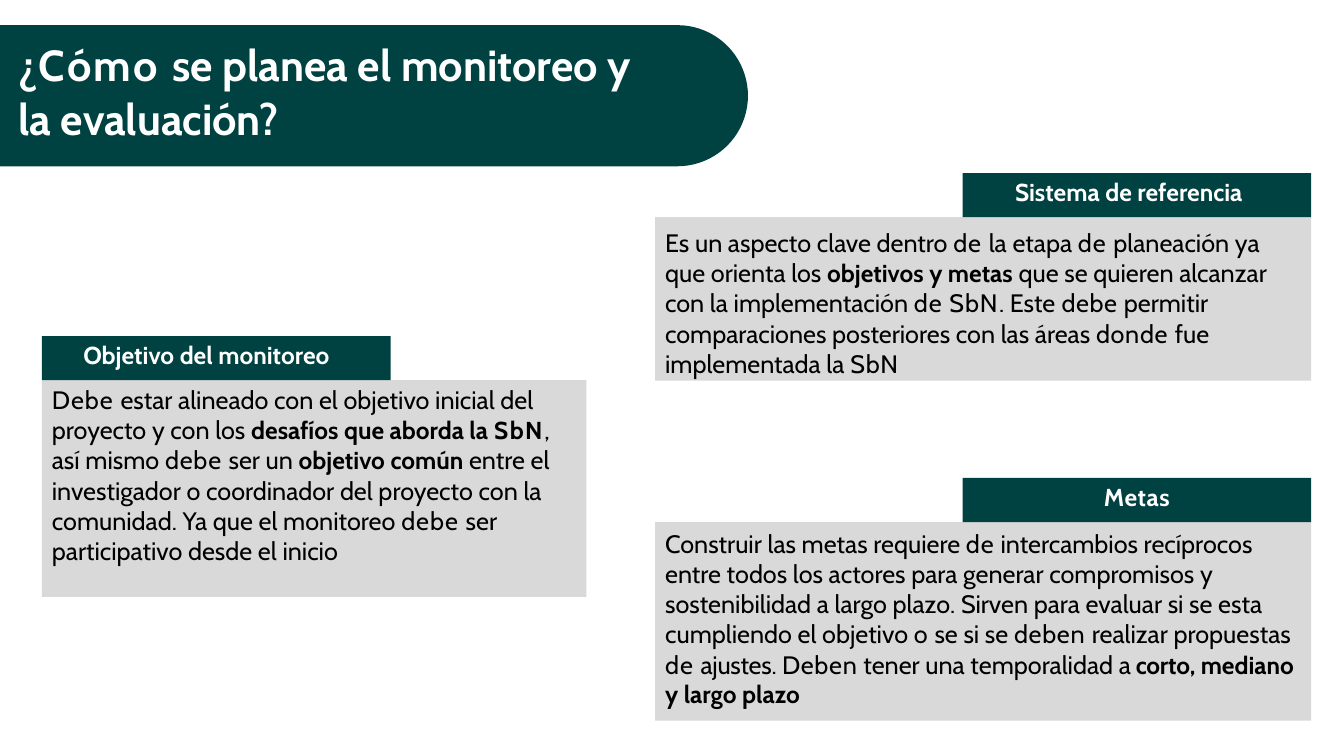
import math
from dataclasses import dataclass

from lxml import etree
from pptx import Presentation
from pptx import util as u
from pptx.dml.color import RGBColor
from pptx.enum import shapes, text


@dataclass(frozen=True)
class Theme:
    font: str = "Cabin"
    green: str = "004241"
    grey: str = "D9D9D9"
    white: str = "FFFFFF"
    black: str = "000000"
    title: float = 31
    body: float = 18
    strong: float = 17.5


def write(shape, runs, size, color, strong=None, align="LEFT", inset=(0, 0, 0, 0),
          before=0, line=1.0):
    """Fill one paragraph; a run is (text, letter spacing, bold)."""
    tf = shape.text_frame
    tf.word_wrap = True
    tf.auto_size = text.MSO_AUTO_SIZE.NONE
    tf.vertical_anchor = text.MSO_ANCHOR.TOP
    tf.margin_left, tf.margin_top, tf.margin_right, tf.margin_bottom = map(u.Inches, inset)
    p = tf.paragraphs[0]
    p.alignment = getattr(text.PP_ALIGN, align)
    p.space_before, p.line_spacing = u.Pt(before), line
    for words, spacing, bold in runs:
        r = p.add_run()
        r.text = words
        r.font.name, r.font.bold = Theme.font, bold
        r.font.size = u.Pt(strong if bold and strong else size)
        r.font.color.rgb = RGBColor.from_string(color)
        if spacing:
            r.font._element.set("spc", str(round(spacing * 100)))


class Deck:
    COLS, ROWS = 32, 18
    HEAD_W, HEAD_H = 8.3, 1.05

    def __init__(self, theme):
        self.theme = theme
        self.prs = Presentation()
        self.prs.slide_width, self.prs.slide_height = u.Inches(13.33), u.Inches(7.5)
        self.s = self.prs.slides.add_slide(self.prs.slide_layouts[5])

    def x(self, cols):
        return round(self.prs.slide_width * cols / self.COLS)

    def y(self, rows):
        return round(self.prs.slide_height * rows / self.ROWS)

    def paint(self, sp, color):
        sp.shadow.inherit = False
        sp.fill.solid()
        sp.fill.fore_color.rgb = RGBColor.from_string(color)
        sp.line.fill.background()

    def banner(self, top, width, height, steps=40):
        """Band from the left edge that ends in a half circle."""
        radius = self.y(height) / 2
        cx, cy = self.x(width) - radius, self.y(top) + radius
        angles = [math.pi * (i / steps - 0.5) for i in range(steps + 1)]
        arc = [(round(cx + radius * math.cos(a)), round(cy + radius * math.sin(a)))
               for a in angles]
        fb = self.s.shapes.build_freeform(0, self.y(top))
        fb.add_line_segments(arc + [(0, self.y(top + height))], close=True)
        sp = fb.convert_to_shape()
        self.paint(sp, self.theme.green)
        self.s.shapes._spTree.insert(2, sp._element)  # behind the title

    def title(self, left, top, width, height, runs):
        sp = self.s.shapes.title
        sp.left, sp.top = self.x(left), self.y(top)
        sp.width, sp.height = self.x(width), self.y(height)
        write(sp, runs, self.theme.title, self.theme.white,
              inset=(0.01, 0.01, 0, 0), before=0.7, line=u.Pt(38.9))

    def box(self, left, top, width, height, color):
        sp = self.s.shapes.add_shape(shapes.MSO_SHAPE.RECTANGLE, self.x(left), self.y(top),
                                     self.x(width), self.y(height))
        self.paint(sp, color)
        return sp

    def card(self, left, top, width, height, heading, runs, head_right=True, head_indent=0.0,
             head_align="LEFT", head_spacing=0.0, pad_top=0.04, pad_right=0.2, before=3.0):
        """Grey text box under a green heading on its left or right end."""
        t = self.theme
        body = self.box(left, top + self.HEAD_H, width, height, t.grey)
        write(body, runs, t.body, t.black, t.strong,
              inset=(0.1, pad_top, pad_right, 0), before=before)
        head_left = left + (width - self.HEAD_W if head_right else 0)
        head = self.box(head_left, top, self.HEAD_W, self.HEAD_H, t.green)
        write(head, [(heading, head_spacing, True)], t.strong, t.white,
              align=head_align, inset=(head_indent, 0.04, 0, 0), before=3.1)


def main():
    deck = Deck(Theme())

    # Title on its banner
    deck.banner(0.6, 17.81, 3.36)
    deck.title(0.41, 0.82, 15.62, 2.62, [
        ("¿Cómo ", 1.6, True), ("se planea el monitoreo y la evaluación?", 0, True)])

    # Left card
    deck.card(1, 8, 12.96, 5.16, "Objetivo del monitoreo", [
        ("Debe ", 0.7, False),
        ("estar alineado con el objetivo inicial del proyecto y con los ", 0, False),
        ("desafíos que aborda la ", 0, True), ("SbN", 1.3, True),
        (", así mismo ", 0, False), ("debe ", 0.6, False), ("ser un ", 0, False),
        ("objetivo común ", 0, True),
        ("entre el investigador o coordinador del proyecto con la comunidad. "
         "Ya que el monitoreo ", 0, False),
        ("debe ", 0.7, False), ("ser participativo desde el inicio", 0, False),
    ], head_right=False, head_indent=0.41, before=2.6)

    # Right cards
    deck.card(15.6, 4.12, 15.62, 3.89, "Sistema de referencia", [
        ("Es un aspecto clave dentro ", 0, False), ("de ", 0.7, False),
        ("la etapa ", 0, False), ("de ", 0.7, False),
        ("planeación ya que orienta los ", 0, False), ("objetivos y metas ", 0, True),
        ("que se quieren alcanzar con la implementación ", 0, False), ("de ", 0.7, False),
        ("SbN", 0.9, False), (". Este", 0, False), (" debe ", 0.4, False),
        ("permitir comparaciones posteriores con las áreas ", 0, False),
        ("donde ", 0.5, False), ("fue implementada la ", 0, False), ("SbN", 0.7, False),
    ], head_indent=0.52, pad_top=0.1, before=7.5)

    deck.card(15.6, 11.38, 15.62, 4.73, "Metas", [
        ("Construir las metas requiere ", 0, False), ("de", 0.7, False),
        (" intercambios recíprocos entre todos los actores para generar compromisos ", 0, False),
        ("y ", -0.5, False),
        ("sostenibilidad a largo plazo. Sirven para evaluar si se esta "
         "cumpliendo el objetivo ", 0, False),
        ("o", 0.8, False), (" se si se ", 0, False), ("deben ", 0.5, False),
        ("realizar propuestas ", 0, False), ("de ", 0.7, False),
        ("ajustes. ", -0.2, False), ("Deben", 0.5, False),
        (" tener una temporalidad ", 0, False), ("a ", -0.5, False),
        ("corto, ", -0.2, True), ("mediano y largo plazo", 0, True),
    ], head_align="CENTER", head_spacing=0.4, pad_top=0.06, pad_right=0.1, before=4)

    deck.prs.save("out.pptx")


if __name__ == "__main__":
    main()
